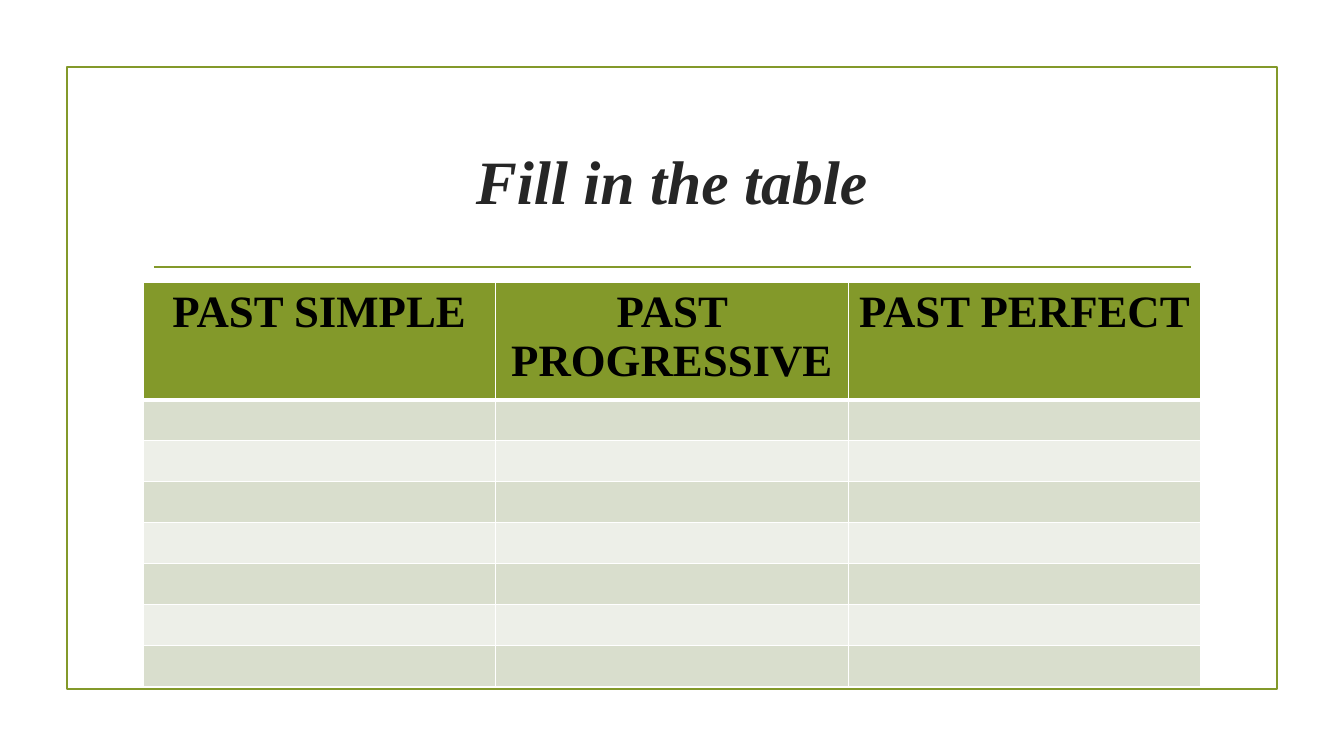
"""Build a slide with a framed title and an empty table of past tenses."""
from dataclasses import dataclass

import lxml.etree
import pptx
import pptx.dml.color
import pptx.enum.shapes
import pptx.enum.text
import pptx.oxml.ns
import pptx.util


@dataclass(frozen=True)
class Theme:
    font: str = "Times New Roman"
    accent: str = "83992A"
    title: str = "262626"
    header: str = "000000"
    border: str = "FFFFFF"
    bands: tuple = ("D9DECD", "EDEFE8")
    title_size: int = 44
    header_size: int = 32
    line_width: float = 1.25
    border_width: int = 1
    header_rule: int = 3


def px(n):
    return pptx.util.Emu(round(n * 914400 / 100.8))


def rgb(value):
    return pptx.dml.color.RGBColor.from_string(value)


class SlideBuilder:
    def __init__(self, prs, theme):
        self.theme = theme
        self.s = prs.slides.add_slide(prs.slide_layouts[6])

    def stroke(self, line):
        line.color.rgb = rgb(self.theme.accent)
        line.width = pptx.util.Pt(self.theme.line_width)

    def add_text(self, tf, text, color, **fmt):
        p = tf.paragraphs[0]
        p.alignment = pptx.enum.text.PP_ALIGN.CENTER
        r = p.add_run()
        r.text = text
        r.font.color.rgb = rgb(color)
        for name, value in {"name": self.theme.font, "bold": True, **fmt}.items():
            setattr(r.font, name, value)

    def frame(self, x, y, w, h):
        sp = self.s.shapes.add_shape(pptx.enum.shapes.MSO_SHAPE.RECTANGLE, px(x), px(y), px(w), px(h))
        sp.shadow.inherit = False
        sp.fill.background()
        self.stroke(sp.line)

    def rule(self, x1, x2, y):
        cx = self.s.shapes.add_connector(
            pptx.enum.shapes.MSO_CONNECTOR.STRAIGHT, px(x1), px(y), px(x2), px(y))
        self.stroke(cx.line)
        lxml.etree.SubElement(cx.element.spPr, pptx.oxml.ns.qn("a:effectLst"))

    def title(self, text, x, y, w, h):
        tf = self.s.shapes.add_textbox(px(x), px(y), px(w), px(h)).text_frame
        tf.word_wrap = True
        tf.vertical_anchor = pptx.enum.text.MSO_ANCHOR.MIDDLE
        self.add_text(tf, text, self.theme.title, italic=True,
                      size=pptx.util.Pt(self.theme.title_size))

    def borders(self, cell, top, bottom):
        qn = pptx.oxml.ns.qn
        tcPr = cell._tc.get_or_add_tcPr()
        side = self.theme.border_width
        widths = {"a:lnL": side, "a:lnR": side, "a:lnT": top, "a:lnB": bottom}
        for i, (tag, width) in enumerate(widths.items()):
            ln = lxml.etree.Element(qn(tag), w=str(pptx.util.Pt(width)))
            fill = lxml.etree.SubElement(ln, qn("a:solidFill"))
            lxml.etree.SubElement(fill, qn("a:srgbClr"), val=self.theme.border)
            tcPr.insert(i, ln)

    def table(self, headings, body_rows, x, y, w, header_h, row_h):
        t = self.theme
        heights = [header_h] + [row_h] * body_rows
        table = self.s.shapes.add_table(
            len(heights), len(headings), px(x), px(y), px(w), px(sum(heights))).table
        for i, height in enumerate(heights):
            table.rows[i].height = px(height)
            color = t.bands[(i - 1) % len(t.bands)] if i else t.accent
            top = t.header_rule if i == 1 else t.border_width
            bottom = t.border_width if i else t.header_rule
            for cell in table.rows[i].cells:
                cell.fill.solid()
                cell.fill.fore_color.rgb = rgb(color)
                self.borders(cell, top, bottom)
        for cell, heading in zip(table.rows[0].cells, headings):
            self.add_text(cell.text_frame, heading, t.header, size=pptx.util.Pt(t.header_size))


def main():
    prs = pptx.Presentation()
    prs.slide_width, prs.slide_height = px(1344), px(756)
    slide = SlideBuilder(prs, Theme())
    slide.frame(67, 67, 1210, 622)
    slide.rule(154, 1191, 267)
    slide.title("Fill in the table", 143, 108, 1058, 144)
    slide.table(["PAST SIMPLE", "PAST PROGRESSIVE", "PAST PERFECT"], 7,
                x=143, y=282, w=1058, header_h=108, row_h=41)
    prs.save("out.pptx")


if __name__ == "__main__":
    main()
